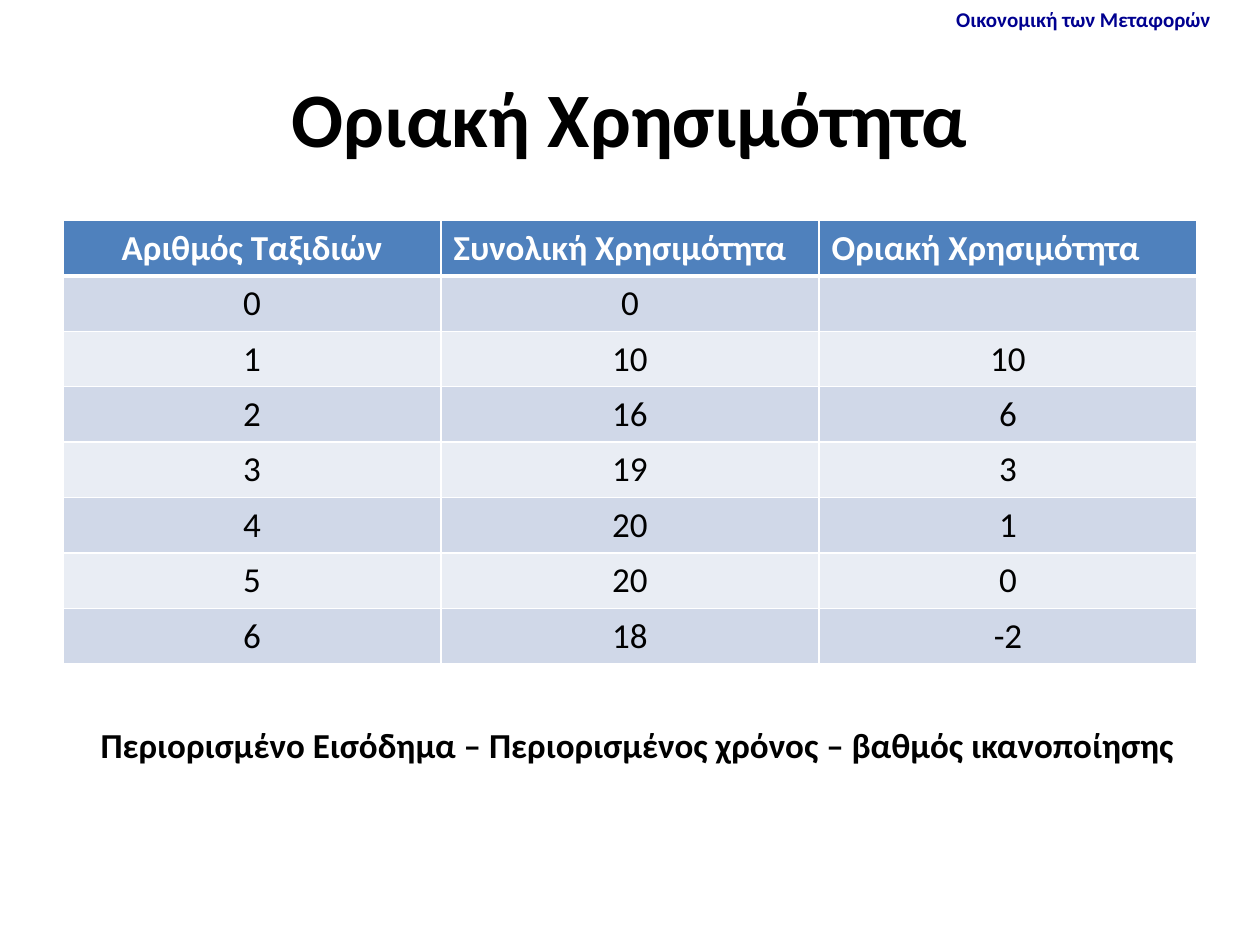
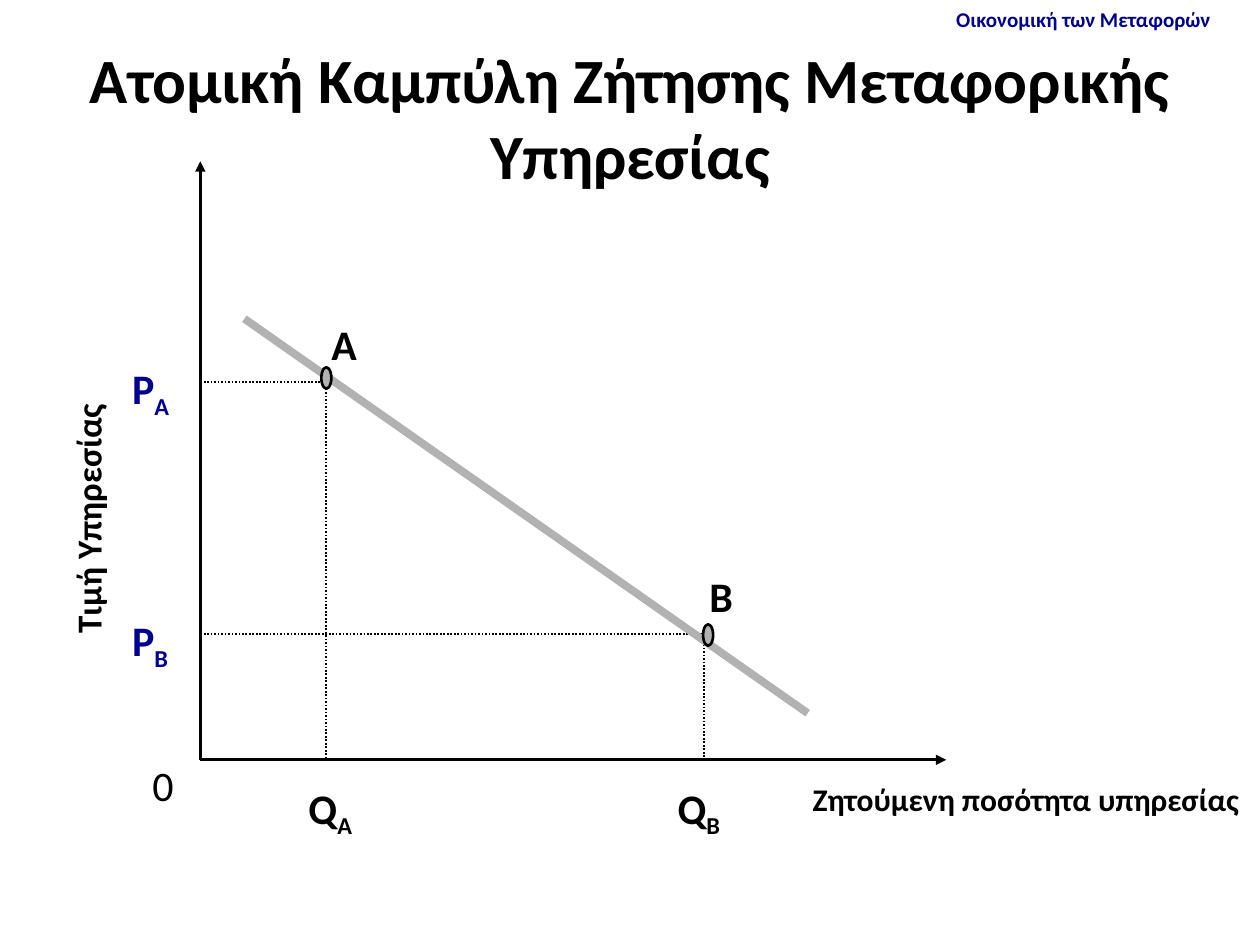
from lxml.etree import SubElement
from pptx import Presentation
from pptx.dml.color import RGBColor
from pptx.enum.dml import MSO_LINE
from pptx.enum.shapes import MSO_CONNECTOR, MSO_SHAPE
from pptx.enum.text import MSO_ANCHOR, MSO_AUTO_SIZE as AutoSize, PP_ALIGN
from pptx.oxml.ns import qn
from pptx.util import Inches, Pt

FONT = "Calibri"
BLACK, WHITE, NAVY, GREY = "000000", "FFFFFF", "000090", "B2B2B2"
HEADER_BLUE, BAND_DARK, BAND_LIGHT = "4F81BD", "D0D8E8", "E9EDF4"
COURSE_NAME = "Οικονομική των Μεταφορών"


def rgb(value):
    return RGBColor.from_string(value)


class Deck:
    def __init__(self):
        self.presentation = Presentation()
        self.presentation.slide_width = Inches(10)
        self.presentation.slide_height = Inches(7.5)
        self.slide = None

    def format_runs(self, paragraph, size, color=BLACK, bold=True):
        for run in paragraph.runs:
            run.font.name = FONT
            run.font.size = Pt(size)
            run.font.bold = bold
            run.font.color.rgb = rgb(color)

    def new_slide(self, title, size):
        layout = self.presentation.slide_layouts[5]
        self.slide = self.presentation.slides.add_slide(layout)
        shape = self.slide.shapes.title
        shape.left, shape.top = Inches(0.5), Inches(0.3)
        shape.width, shape.height = Inches(9), Inches(1.25)
        frame = shape.text_frame
        frame.text = title
        frame.auto_size = AutoSize.NONE
        frame.vertical_anchor = MSO_ANCHOR.MIDDLE
        paragraph = frame.paragraphs[0]
        paragraph.alignment = PP_ALIGN.CENTER
        self.format_runs(paragraph, size)
        self.label(COURSE_NAME, 7.49, 0, 2.25, 0.3, 12, NAVY)

    def text_box(self, text, left, top, width, height, size, color, bold):
        shape = self.slide.shapes.add_textbox(
            Inches(left), Inches(top), Inches(width), Inches(height))
        shape.text_frame.text = text
        self.format_runs(shape.text_frame.paragraphs[0], size, color, bold)
        return shape

    def label(self, text, left, top, width, height, size, color=BLACK, subscript=""):
        """One-line text that may end in a subscript."""
        shape = self.text_box(text, left, top, width, height, size, color, True)
        frame = shape.text_frame
        frame.word_wrap = False
        frame.auto_size = AutoSize.SHAPE_TO_FIT_TEXT
        if subscript:
            paragraph = frame.paragraphs[0]
            run = paragraph.add_run()
            run.text = subscript
            self.format_runs(paragraph, size, color)
            run._r.get_or_add_rPr().set("baseline", "-25000")

    def graph_text(self, text, left, top, width, height, size, bold=True, rotation=0):
        """Tight wrapped text set beside the graph."""
        shape = self.text_box(text, left, top, width, height, size, BLACK, bold)
        shape.rotation = rotation
        frame = shape.text_frame
        frame.word_wrap = True
        frame.margin_left = frame.margin_right = Inches(0.04)
        frame.margin_top = frame.margin_bottom = 0

    def line(self, start, end, width, color=BLACK, dotted=False, arrow=False):
        connector = self.slide.shapes.add_connector(
            MSO_CONNECTOR.STRAIGHT, *(Inches(value) for value in (*start, *end)))
        connector.line.width = Pt(width)
        connector.line.color.rgb = rgb(color)
        if dotted:
            connector.line.dash_style = MSO_LINE.ROUND_DOT
        properties = connector._element.spPr
        if arrow:
            SubElement(properties.find(qn("a:ln")), qn("a:tailEnd"), type="triangle")
        SubElement(properties, qn("a:effectLst"))

    def dot(self, center_x, center_y, width=0.08, height=0.17):
        shape = self.slide.shapes.add_shape(
            MSO_SHAPE.OVAL, Inches(center_x - width / 2),
            Inches(center_y - height / 2), Inches(width), Inches(height))
        shape.shadow.inherit = False
        shape.fill.solid()
        shape.fill.fore_color.rgb = rgb(GREY)
        shape.line.color.rgb = rgb(BLACK)
        shape.line.width = Pt(1.5)

    def cell_borders(self, cell, top, bottom):
        properties = cell._tc.get_or_add_tcPr()
        for side, width in (("L", 1), ("R", 1), ("T", top), ("B", bottom)):
            border = SubElement(properties, qn(f"a:ln{side}"), w=str(Pt(width)))
            fill = SubElement(border, qn("a:solidFill"))
            SubElement(fill, qn("a:srgbClr"), val=WHITE)

    def table(self, rows, left, top, column_width, row_height, size):
        columns = len(rows[0])
        table = self.slide.shapes.add_table(
            len(rows), columns, Inches(left), Inches(top),
            Inches(column_width * columns), Inches(row_height * len(rows))).table
        for row_index, row in enumerate(rows):
            table.rows[row_index].height = Inches(row_height)
            is_header = row_index == 0
            band = BAND_DARK if row_index % 2 else BAND_LIGHT
            for column_index, value in enumerate(row):
                cell = table.cell(row_index, column_index)
                self.cell_borders(cell, 3 if row_index == 1 else 1, 3 if is_header else 1)
                cell.fill.solid()
                cell.fill.fore_color.rgb = rgb(HEADER_BLUE if is_header else band)
                cell.text_frame.text = value
                paragraph = cell.text_frame.paragraphs[0]
                left_aligned = is_header and column_index > 0
                paragraph.alignment = PP_ALIGN.LEFT if left_aligned else PP_ALIGN.CENTER
                self.format_runs(paragraph, size, WHITE if is_header else BLACK, is_header)


def marginal_utility(deck):
    deck.new_slide("Οριακή Χρησιμότητα", 44)

    # Utility by number of trips
    rows = [
        ("Αριθμός Ταξιδιών", "Συνολική Χρησιμότητα", "Οριακή Χρησιμότητα"),
        ("0", "0", ""),
        ("1", "10", "10"),
        ("2", "16", "6"),
        ("3", "19", "3"),
        ("4", "20", "1"),
        ("5", "20", "0"),
        ("6", "18", "-2"),
    ]
    deck.table(rows, 0.5, 1.75, column_width=3, row_height=0.44, size=20)

    # Conclusion
    deck.label("Περιορισμένο Εισόδημα – Περιορισμένος χρόνος – βαθμός ικανοποίησης",
               0.7, 5.69, 8.8, 0.44, 20)


def demand_curve(deck):
    deck.new_slide("Ατομική Καμπύλη Ζήτησης Μεταφορικής Υπηρεσίας", 36)
    origin_x, origin_y = origin = 1.59, 6.03
    # Name, point, dot centre, left edge of quantity label
    points = [
        ("A", (2.59, 3.03), (2.59, 3.0), 2.35),
        ("B", (5.59, 5.03), (5.62, 5.04), 5.28),
    ]

    # Guides
    for name, (x, y), center, quantity_left in points:
        deck.line((origin_x, y), (x, y), 1, dotted=True)
        deck.line((x, y), (x, origin_y), 1, dotted=True)

    # Axes
    deck.line(origin, (origin_x, 1.28), 1.5, arrow=True)
    deck.line(origin, (7.51, origin_y), 1.5, arrow=True)
    deck.graph_text("Ζητούμενη ποσότητα υπηρεσίας", 6.41, 6.19, 3.59, 0.47, 18)
    deck.graph_text("Τιμή Υπηρεσίας", -0.62, 3.16, 3.06, 0.76, 20, rotation=270)
    deck.graph_text("0", 1.17, origin_y, 0.51, 0.47, 24, bold=False)

    # Demand curve
    deck.line((1.94, 2.53), (6.41, 5.66), 4.5, GREY)

    # Points with their price and quantity
    for name, (x, y), center, quantity_left in points:
        deck.dot(*center)
        deck.graph_text(name, x, y - 0.5, 0.43, 0.47, 24)
        deck.label("P", 0.95, y - 0.2, 0.51, 0.5, 24, NAVY, subscript=name)
        deck.label("Q", quantity_left, 6.16, 0.56, 0.5, 24, subscript=name)


def main():
    deck = Deck()
    marginal_utility(deck)
    demand_curve(deck)
    deck.presentation.save("out.pptx")


if __name__ == "__main__":
    main()
